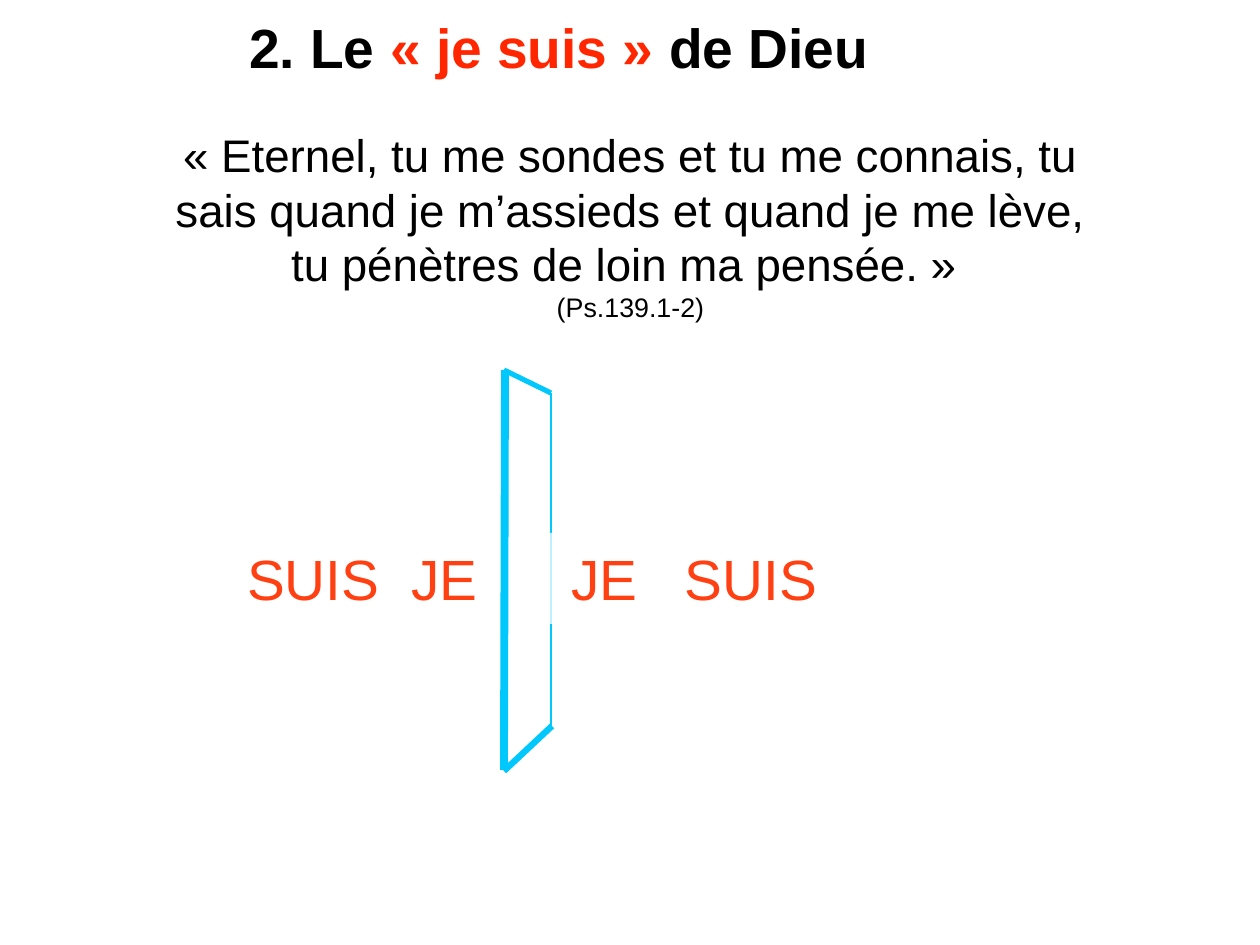
from dataclasses import dataclass

from lxml import etree
from pptx import Presentation
from pptx import util as u
from pptx.dml.color import RGBColor
from pptx.enum import shapes, text
from pptx.oxml.ns import qn

PX = 8064  # EMU in one px


@dataclass(frozen=True)
class Theme:
    font: str = "Arial"
    ink: str = "000000"
    red: str = "FF2600"
    glow: str = "FF4013"
    edge: str = "00C7FC"
    veil: str = "FFFFFF"
    head: int = 35
    word: int = 36
    verse: int = 29
    cite: int = 17


@dataclass(frozen=True)
class Box:
    left: int
    top: int
    width: int
    height: int


@dataclass(frozen=True)
class Edge:
    x1: int
    y1: int
    x2: int
    y2: int
    points: float


THEME = Theme()
TITLE = Box(245, 9, 633, 74)
QUOTE = Box(159, 127, 943, 196)
WORDS = Box(219, 540, 627, 76)
VEILS = [Box(281, 531, 243, 94), Box(538, 533, 243, 91)]
MIRROR = [
    Edge(505, 370, 504, 770, 5),
    Edge(551, 393, 551, 726, 1),
    Edge(551, 393, 504, 370, 3.25),
    Edge(552, 726, 504, 771, 4),
]
TABS = [164, 324, 438]


def px(size: int) -> u.Emu:
    return u.Emu(size * PX)


def place(box: Box) -> tuple:
    return px(box.left), px(box.top), px(box.width), px(box.height)


def rgb(code: str) -> RGBColor:
    return RGBColor.from_string(code)


def set_frame(frame, inset: int, wrap: bool) -> None:
    frame.word_wrap = wrap
    frame.auto_size = text.MSO_AUTO_SIZE.SHAPE_TO_FIT_TEXT
    frame.vertical_anchor = text.MSO_ANCHOR.MIDDLE
    frame.margin_left = frame.margin_right = px(inset)
    frame.margin_top = frame.margin_bottom = px(inset)


def set_font(para, size: int, color: str, align) -> None:
    para.alignment = align
    para.font.name = THEME.font
    para.font.size = u.Pt(size)
    para.font.color.rgb = rgb(color)


def add_veil(slide, box: Box) -> None:
    veil = slide.shapes.add_shape(shapes.MSO_SHAPE.RECTANGLE, *place(box))
    veil.shadow.inherit = False
    veil.line.fill.background()
    veil.fill.solid()
    veil.fill.fore_color.rgb = rgb(THEME.veil)
    color = veil.fill._xPr.find(".//" + qn("a:srgbClr"))
    etree.SubElement(color, qn("a:alpha"), val="74000")


def add_edge(slide, edge: Edge) -> None:
    line = slide.shapes.add_connector(
        shapes.MSO_CONNECTOR.STRAIGHT,
        px(edge.x1), px(edge.y1), px(edge.x2), px(edge.y2))
    line.line.color.rgb = rgb(THEME.edge)
    line.line.width = u.Pt(edge.points)
    etree.SubElement(line._element.spPr, qn("a:effectLst"))


def add_title(slide) -> None:
    title = slide.shapes.title
    title.left, title.top, title.width, title.height = place(TITLE)
    frame = title.text_frame
    # A slim right margin keeps the heading on one line
    set_frame(frame, 7, True)
    frame.margin_left, frame.margin_right = px(4), px(0)
    para = frame.paragraphs[0]
    set_font(para, THEME.head, THEME.ink, text.PP_ALIGN.LEFT)
    para.font.bold = True
    for part, color in [("2. Le ", THEME.ink), ("« je suis »", THEME.red),
                        (" de Dieu", THEME.ink)]:
        run = para.add_run()
        run.text = part
        run.font.color.rgb = rgb(color)


def add_words(slide) -> None:
    frame = slide.shapes.add_textbox(*place(WORDS)).text_frame
    set_frame(frame, 5, True)
    frame.margin_left = px(28)
    para = frame.paragraphs[0]
    para.text = "SUIS\tJE\tJE\tSUIS"
    set_font(para, THEME.word, THEME.glow, text.PP_ALIGN.LEFT)
    # Tab stops go ahead of the default run properties
    stops = etree.Element(qn("a:tabLst"))
    for stop in TABS:
        etree.SubElement(stops, qn("a:tab"), pos=str(px(stop)), algn="l")
    para._p.pPr.insert(0, stops)


def add_quote(slide) -> None:
    frame = slide.shapes.add_textbox(*place(QUOTE)).text_frame
    set_frame(frame, 5, True)
    verse, cite = frame.paragraphs[0], frame.add_paragraph()
    verse.text = ("« Eternel, tu me sondes et tu me connais, tu sais quand "
                  "je m’assieds et quand je me lève, tu pénètres de loin "
                  "ma pensée. » ")
    cite.text = "(Ps.139.1-2)"
    for para, size in [(verse, THEME.verse), (cite, THEME.cite)]:
        set_font(para, size, THEME.ink, text.PP_ALIGN.CENTER)


def main() -> None:
    deck = Presentation()
    deck.slide_width, deck.slide_height = px(1260), px(945)
    slide = deck.slides.add_slide(deck.slide_layouts.get_by_name("Title Only"))
    add_title(slide)

    # Mirror between the two veils
    back, front = VEILS
    add_veil(slide, back)
    for edge in MIRROR:
        add_edge(slide, edge)
    add_veil(slide, front)

    # Texts
    add_words(slide)
    add_quote(slide)
    deck.save("out.pptx")


if __name__ == "__main__":
    main()
